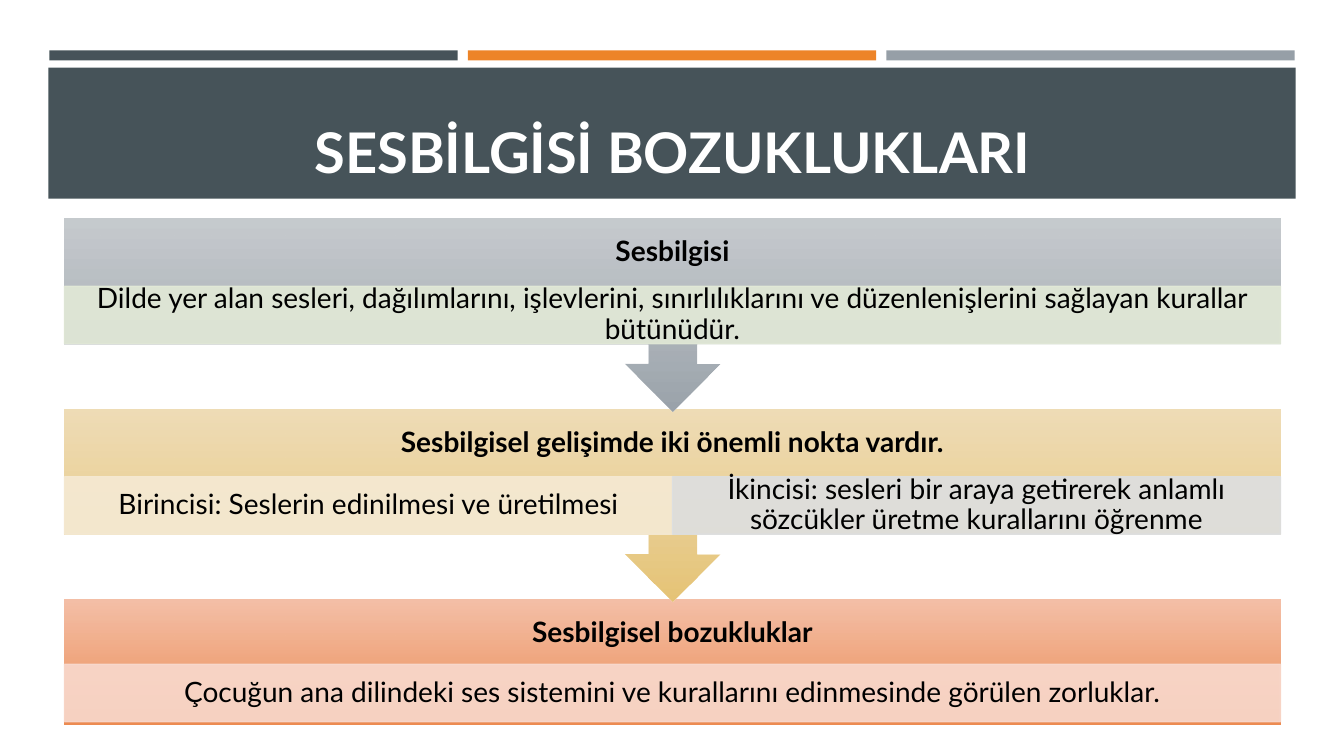
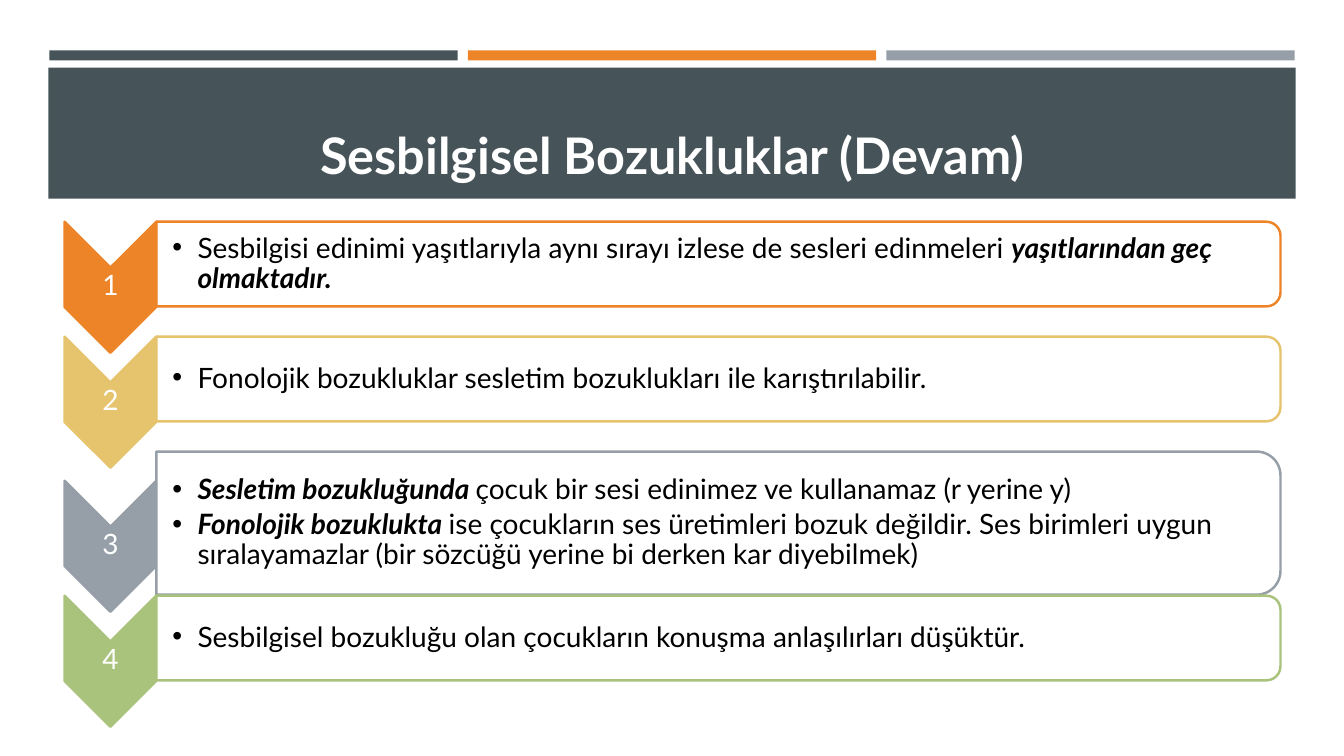
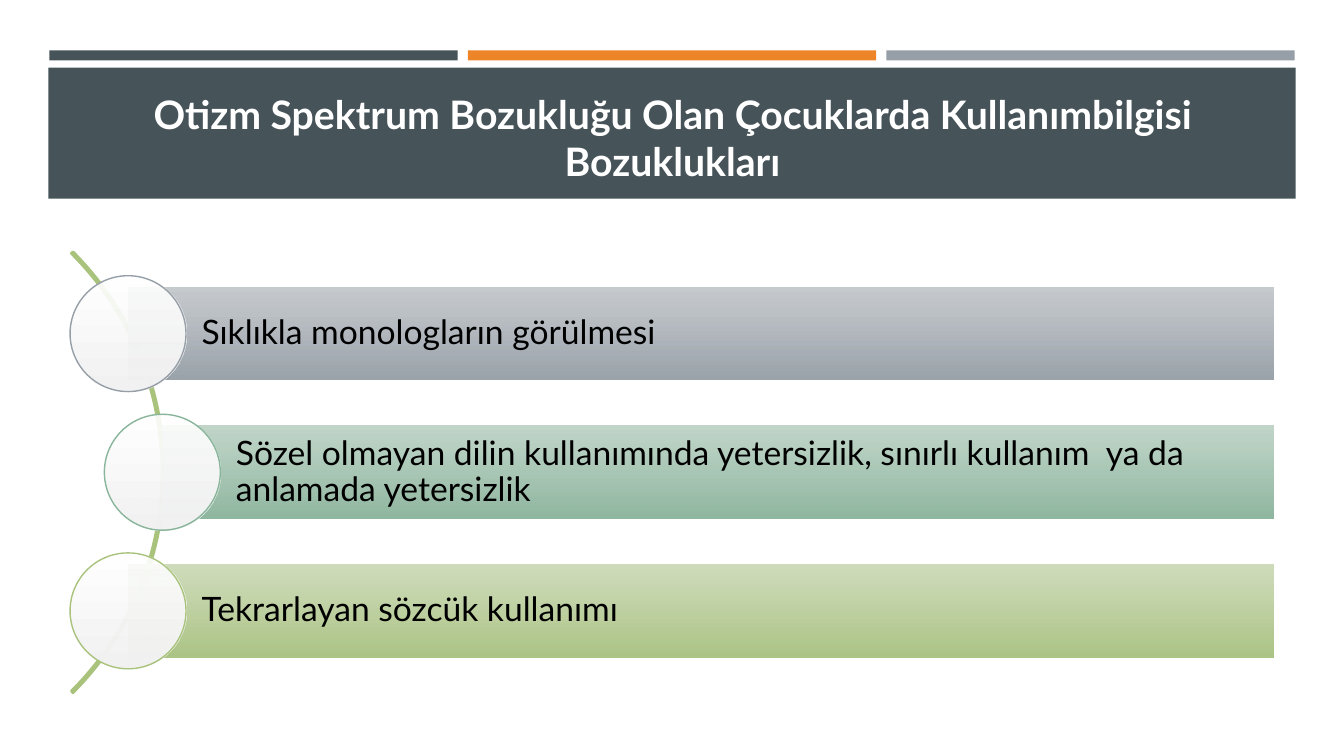
from pptx import Presentation
from pptx.dml.color import RGBColor
from pptx.enum.shapes import MSO_SHAPE as Preset
from pptx.enum.text import MSO_ANCHOR as Anchor, MSO_AUTO_SIZE as AutoSize, PP_ALIGN as Align
from pptx.oxml.ns import qn
from pptx.util import Inches, Pt
from lxml import etree

# Shared style
FONT = "Lato"
WHITE = RGBColor(0xFF, 0xFF, 0xFF)
BLACK = RGBColor(0x00, 0x00, 0x00)
PALE = RGBColor(0xF2, 0xF2, 0xF2)
SLATE = RGBColor(0x46, 0x53, 0x59)
ORANGE = RGBColor(0xED, 0x84, 0x28)
GRAY = RGBColor(0x96, 0x9F, 0xA7)
GOLD = RGBColor(0xE6, 0xC4, 0x6D)
GREEN = RGBColor(0xA9, 0xC3, 0x7C)
TEAL = RGBColor(0x89, 0xB5, 0x9B)
GREEN_TINT = RGBColor(0xE2, 0xE9, 0xD7)
GOLD_TINT = RGBColor(0xF5, 0xEA, 0xD4)
GRAY_TINT = RGBColor(0xDD, 0xDF, 0xE1)
CORAL_TINT = RGBColor(0xF8, 0xD9, 0xCD)
GRAY_FADE = (RGBColor(0xC0, 0xC5, 0xC9), RGBColor(0x9B, 0xA3, 0xAB))
GOLD_FADE = (RGBColor(0xEE, 0xD9, 0xAE), RGBColor(0xE6, 0xC4, 0x76))
CORAL_FADE = (RGBColor(0xF3, 0xB8, 0x9D), RGBColor(0xED, 0x8C, 0x53))
TEAL_FADE = (RGBColor(0xBA, 0xD1, 0xC3), RGBColor(0x90, 0xB7, 0xA0))
GREEN_FADE = (RGBColor(0xCA, 0xD9, 0xB4), RGBColor(0xAC, 0xC4, 0x85))
WHITE_FADE = (WHITE, PALE)
LEFT, WIDTH = 0.64, 12.06

# Content: heading, fade, details as (text, tint)
PHONOLOGY = [
    ("Sesbilgisi", GRAY_FADE, [
        ("Dilde yer alan sesleri, dağılımlarını, işlevlerini, sınırlılıklarını ve "
         "düzenlenişlerini sağlayan kurallar bütünüdür.", GREEN_TINT)]),
    ("Sesbilgisel gelişimde iki önemli nokta vardır.", GOLD_FADE, [
        ("Birincisi: Seslerin edinilmesi ve üretilmesi", GOLD_TINT),
        ("İkincisi: sesleri bir araya getirerek anlamlı sözcükler üretme "
         "kurallarını öğrenme", GRAY_TINT)]),
    ("Sesbilgisel bozukluklar", CORAL_FADE, [
        ("Çocuğun ana dilindeki ses sistemini ve kurallarını edinmesinde "
         "görülen zorluklar.", CORAL_TINT)]),
]
# Colour, card height, paragraphs of (text, emphasised) spans
FEATURES = [
    (ORANGE, 0.84, [[
        ("Sesbilgisi edinimi yaşıtlarıyla aynı sırayı izlese de sesleri edinmeleri ", False),
        ("yaşıtlarından geç olmaktadır.", True)]]),
    (GOLD, 0.84, [[
        ("Fonolojik bozukluklar sesletim bozuklukları ile karıştırılabilir.", False)]]),
    (GRAY, 1.42, [
        [("Sesletim bozukluğunda ", True),
         ("çocuk bir sesi edinimez ve kullanamaz (r yerine y)", False)],
        [("Fonolojik bozuklukta ", True),
         ("ise çocukların ses üretimleri bozuk değildir. Ses birimleri uygun "
          "sıralayamazlar (bir sözcüğü yerine bi derken kar diyebilmek)", False)]]),
    (GREEN, 0.84, [[
        ("Sesbilgisel bozukluğu olan çocukların konuşma anlaşılırları düşüktür.", False)]]),
]
# Text, bar left, bar fade, circle outline
PRAGMATICS = [
    ("Sıklıkla monologların görülmesi", 1.27, GRAY_FADE, GRAY),
    ("Sözel olmayan dilin kullanımında yetersizlik, sınırlı kullanım  ya da anlamada "
     "yetersizlik", 1.61, TEAL_FADE, TEAL),
    ("Tekrarlayan sözcük kullanımı", 1.27, GREEN_FADE, GREEN),
]


# Helpers
def add_shape(page, preset, area, fill=None, line=None, weight=1, faded=0):
    """fill is a colour or a (top, bottom) fade; the first `faded` colours get 90% opacity."""
    shape = page.shapes.add_shape(preset, *map(Inches, area))
    shape.shadow.inherit = False
    if fill is None:
        shape.fill.background()
    elif isinstance(fill, RGBColor):
        shape.fill.solid()
        shape.fill.fore_color.rgb = fill
    else:
        shape.fill.gradient()
        shape.fill.gradient_angle = 270
        for stop, color, position in zip(shape.fill.gradient_stops, fill, (0, 1)):
            stop.color.rgb = color
            stop.position = position
        faded = 1
    if line is None:
        shape.line.fill.background()
    else:
        shape.line.color.rgb = line
        shape.line.width = Pt(weight)
    for color in list(shape.element.iter(qn("a:srgbClr")))[:faded]:
        etree.SubElement(color, qn("a:alpha"), val="90000")
    return shape


def add_turned(page, preset, area, **style):
    """Shape turned a quarter clockwise that covers the given area."""
    left, top, width, height = area
    shift = (width - height) / 2
    shape = add_shape(page, preset, (left + shift, top - shift, height, width), **style)
    shape.rotation = 90
    return shape


def add_bullet(para):
    properties = para._p.get_or_add_pPr()
    properties.set("marL", str(Inches(0.25)))
    properties.set("indent", str(-Inches(0.25)))
    etree.SubElement(properties, qn("a:buFont"), typeface="Arial")
    etree.SubElement(properties, qn("a:buChar"), char="•")


def write(shape, content, size=20, color=BLACK, bold=False, align=Align.CENTER,
          anchor=Anchor.MIDDLE, insets=(0.16, 0.03, 0.16, 0.03), spacing=0.9, bullets=False):
    """content is a text or a list of paragraphs of (text, emphasised) spans."""
    frame = shape.text_frame
    sides = ("left", "top", "right", "bottom")
    settings = {f"margin_{side}": Inches(inset) for side, inset in zip(sides, insets)}
    settings |= {"word_wrap": True, "auto_size": AutoSize.NONE, "vertical_anchor": anchor}
    for name, value in settings.items():
        setattr(frame, name, value)
    paragraphs = [[(content, False)]] if isinstance(content, str) else content
    for number, spans in enumerate(paragraphs):
        para = frame.add_paragraph() if number else frame.paragraphs[0]
        if bullets:
            add_bullet(para)
            para.space_after = Pt(3)
        para.alignment = align
        para.line_spacing = spacing
        for text, emphasised in spans:
            span = para.add_run()
            span.text = text
            span.font.color.rgb = color
            look = {"name": FONT, "size": Pt(size), "bold": bold or emphasised,
                    "italic": emphasised}
            for name, value in look.items():
                setattr(span.font, name, value)


def add_text(page, area, content, **style):
    write(page.shapes.add_textbox(*map(Inches, area)), content, **style)


def build_layout(deck, layout):
    """Put the bands and the title place on the layout."""
    page = deck.slides[0]
    bands = [((0.49 + 4.15 * number, 0.5, 4.05, 0.1), color)
             for number, color in enumerate((SLATE, ORANGE, GRAY))]
    bands.append(((0.48, 0.67, 12.37, 1.3), SLATE))
    for number, (area, color) in enumerate(bands):
        band = add_shape(page, Preset.RECTANGLE, area, color).element
        band.nvSpPr.cNvPr.id = 20 + number
        layout.shapes.element.insert(2 + number, band)
    title = layout.placeholders[0]
    place = {"left": LEFT, "top": 0.77, "width": WIDTH, "height": 1.11}
    for name, value in place.items():
        setattr(title, name, Inches(value))


def set_title(page, text, size):
    write(page.shapes.title, text, size, WHITE, bold=True, anchor=Anchor.BOTTOM,
          insets=(0.1, 0.05, 0.1, 0.05), spacing=1.0)


# Slides
def build_phonology(page):
    set_title(page, "SESBİLGİSİ BOZUKLUKLARI", 40)
    last = len(PHONOLOGY) - 1
    for number, (heading, fade, details) in reversed(list(enumerate(PHONOLOGY))):
        top = 2.17 + 1.89 * number
        if number == last:
            preset, height, offset = Preset.RECTANGLE, 1.24, 0.64
        else:
            preset, height, offset = Preset.DOWN_ARROW_CALLOUT, 1.91, 0.67
        add_shape(page, preset, (LEFT, top, WIDTH, height), fade)
        add_text(page, (LEFT, top, WIDTH, 0.67), heading, bold=True, insets=(0.16,) * 4)
        width = WIDTH / len(details)
        for column, (text, tint) in enumerate(details):
            area = (LEFT + width * column, top + offset, width, 0.57)
            write(add_shape(page, Preset.RECTANGLE, area, tint, tint, faded=2), text)


def build_features(page):
    set_title(page, "Sesbilgisel Bozukluklar (Devam)", 36)
    top = 2.2
    for number, (color, height, paragraphs) in enumerate(FEATURES, 1):
        drop = (height - 0.84) / 2
        add_turned(page, Preset.CHEVRON, (LEFT, top + drop, 0.91, 1.3),
                   fill=color, line=color, weight=1.75)
        add_text(page, (LEFT, top + drop + 0.45, 0.91, 0.39), str(number),
                 color=WHITE, insets=(0.01,) * 4)
        add_turned(page, Preset.ROUND_2_SAME_RECTANGLE, (1.55, top, 11.15, height),
                   fill=WHITE, line=color, weight=1.75, faded=1)
        add_text(page, (1.55, top + 0.04, 11.1, height - 0.08), paragraphs,
                 align=Align.LEFT, insets=(0.16, 0.01, 0.01, 0.01), bullets=True)
        top += drop + 1.14


def build_pragmatics(page):
    set_title(page, "Otizm Spektrum Bozukluğu Olan Çocuklarda Kullanımbilgisi Bozuklukları", 28)
    arc = add_shape(page, Preset.BLOCK_ARC, (-4.56, 1.59, 6.19, 6.19), line=GREEN, weight=1.75)
    for number, value in enumerate((189, 27, 0.004)):
        arc.adjustments[number] = value
    height, circle = 0.92, 1.15
    for number, (text, left, fade, outline) in enumerate(PRAGMATICS):
        top = 2.85 + 1.375 * number
        bar = add_shape(page, Preset.RECTANGLE, (left, top, 12.63 - left, height), fade)
        write(bar, text, 24, align=Align.LEFT, insets=(0.73, 0.07, 0.07, 0.07))
        area = (left - circle / 2, top + (height - circle) / 2, circle, circle)
        add_shape(page, Preset.OVAL, area, WHITE_FADE, outline)


def main():
    deck = Presentation()
    deck.slide_width, deck.slide_height = Inches(13.33), Inches(7.5)
    layout = deck.slide_layouts[5]
    builders = (build_phonology, build_features, build_pragmatics)
    pages = [deck.slides.add_slide(layout) for _ in builders]
    build_layout(deck, layout)
    for build, page in zip(builders, pages):
        build(page)
    deck.save("out.pptx")


if __name__ == "__main__":
    main()
